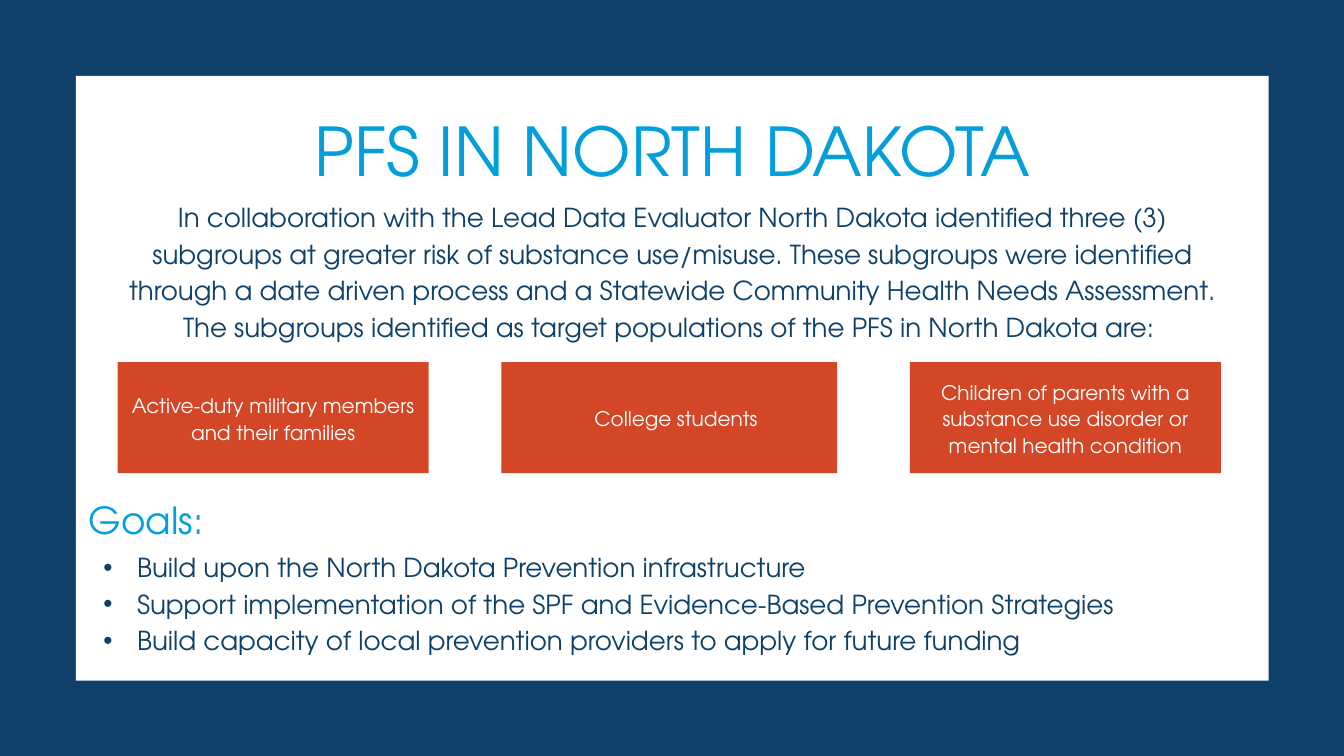
from dataclasses import dataclass

from lxml import etree
from pptx import Presentation
from pptx.dml.color import RGBColor
from pptx.enum.shapes import MSO_SHAPE
from pptx.enum.text import MSO_ANCHOR, MSO_AUTO_SIZE, PP_ALIGN
from pptx.oxml.ns import qn
from pptx.util import Inches, Pt

RECTANGLE = MSO_SHAPE.RECTANGLE
TOP, MIDDLE = MSO_ANCHOR.TOP, MSO_ANCHOR.MIDDLE
LEFT, CENTER = PP_ALIGN.LEFT, PP_ALIGN.CENTER
NO_AUTOFIT = MSO_AUTO_SIZE.NONE


@dataclass(frozen=True)
class Theme:
    font: str = "TeX Gyre Adventor"
    navy: RGBColor = RGBColor(0x0E, 0x40, 0x6A)
    sky: RGBColor = RGBColor(0x04, 0x9F, 0xDA)
    orange: RGBColor = RGBColor(0xD3, 0x47, 0x27)
    white: RGBColor = RGBColor(0xFF, 0xFF, 0xFF)
    title: float = 72
    heading: float = 40
    body: float = 28
    card: float = 21.5


theme = Theme()


def write(shape, lines, size, color, align=CENTER, spacing=None, anchor=TOP, bullet=None):
    frame = shape.text_frame
    frame.text = "\n".join(lines)
    frame.word_wrap = True
    frame.auto_size = NO_AUTOFIT
    frame.vertical_anchor = anchor
    frame.margin_left = frame.margin_top = frame.margin_right = frame.margin_bottom = 0
    for paragraph in frame.paragraphs:
        paragraph.alignment = align
        paragraph.space_before = Pt(0)
        if spacing:
            paragraph.line_spacing = Pt(spacing)
        if bullet:
            properties = paragraph._p.get_or_add_pPr()
            properties.set("marL", str(Inches(0.5)))
            properties.set("indent", str(-Inches(0.5)))
            etree.SubElement(properties, qn("a:buChar")).set("char", bullet)
        paragraph.font.name = theme.font
        paragraph.font.size = Pt(size)
        paragraph.font.color.rgb = color


def block(left, top, width, height, color):
    shape = slide.shapes.add_shape(
        RECTANGLE, Inches(left), Inches(top), Inches(width), Inches(height))
    shape.shadow.inherit = False
    shape.fill.solid()
    shape.fill.fore_color.rgb = color
    shape.line.fill.background()
    return shape


deck = Presentation()
deck.slide_width, deck.slide_height = Inches(20), Inches(11.25)
slide = deck.slides.add_slide(deck.slide_layouts[1])
slide.background.fill.solid()
slide.background.fill.fore_color.rgb = theme.navy

panel = block(1.13, 1.13, 17.75, 9, theme.white)
slide.shapes._spTree.insert(2, panel._element)

title = slide.shapes.title
title.left, title.top, title.width, title.height = (
    Inches(1.13), Inches(1.22), Inches(17.75), Inches(1.39))
write(title, ["PFS IN NORTH DAKOTA"], theme.title, theme.sky, spacing=115.2)

intro = slide.shapes.add_textbox(Inches(1.67), Inches(2.92), Inches(16.67), Inches(2.12))
write(intro, [
    "In collaboration with the Lead Data Evaluator North Dakota identified three (3) "
    "subgroups at greater risk of substance use/misuse. These subgroups were identified "
    "through a date driven process and a Statewide Community Health Needs Assessment. "
    "The subgroups identified as target populations of the PFS in North Dakota are: "
], theme.body, theme.navy, spacing=39.2)

subgroups = [
    (1.75, 4.63, 0, "Active-duty military members and their families"),
    (7.46, 5, 0.2, "College students"),
    (13.54, 4.63, 0, "Children of parents with a substance use disorder or mental health condition"),
]
for left, width, inset, subgroup in subgroups:
    card = block(left, 5.39, width, 1.65, theme.orange)
    write(card, [subgroup], theme.card, theme.white, spacing=28.6, anchor=MIDDLE)
    card.text_frame.margin_left = Inches(inset)

goals_heading = slide.shapes.add_textbox(Inches(1.32), Inches(7.4), Inches(2.33), Inches(0.67))
write(goals_heading, ["Goals:"], theme.heading, theme.sky, align=LEFT)

goals = slide.placeholders[1]
goals.left, goals.top, goals.width, goals.height = (
    Inches(1.54), Inches(8.13), Inches(16.67), Inches(1.57))
write(goals, [
    "Build upon the North Dakota Prevention infrastructure",
    "Support implementation of the SPF and Evidence-Based Prevention Strategies",
    "Build capacity of local prevention providers to apply for future funding",
], theme.body, theme.navy, align=LEFT, spacing=39.2, bullet="•")

deck.save("out.pptx")
